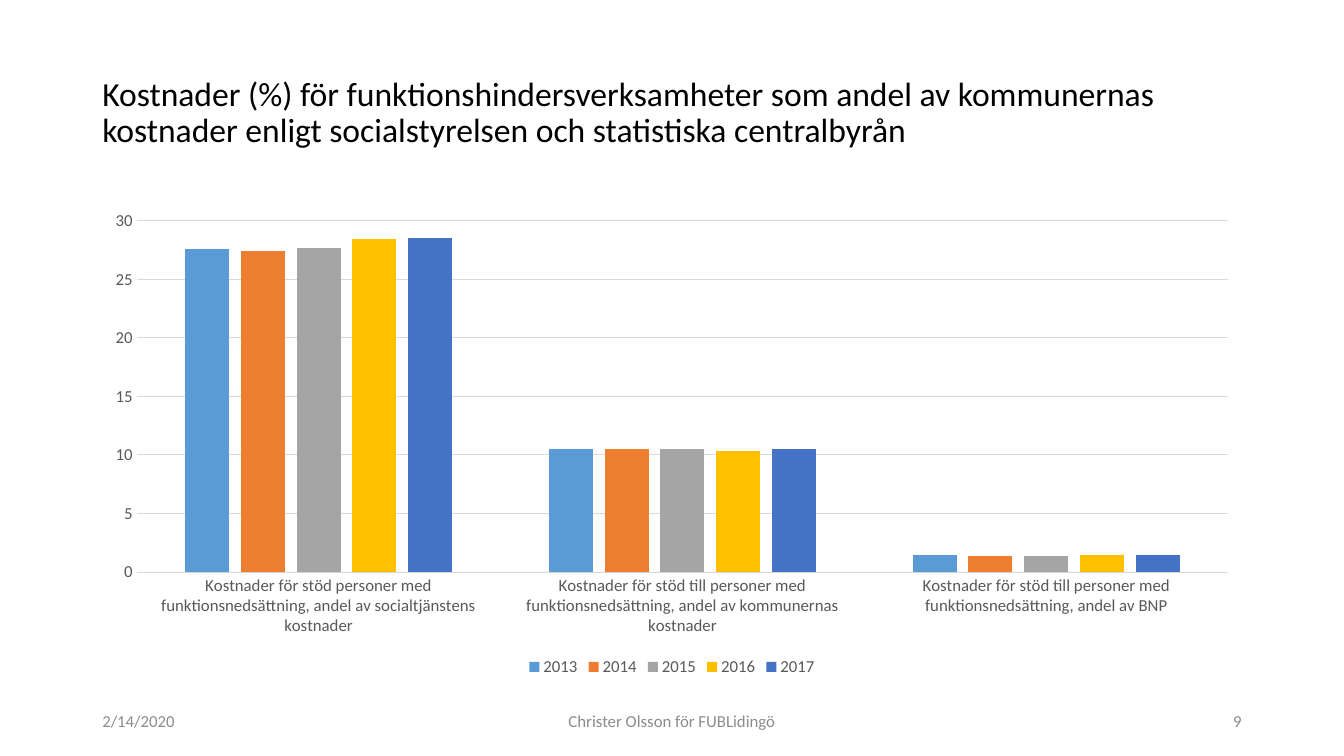
from pptx import Presentation
from pptx.chart.data import CategoryChartData
from pptx.dml.color import RGBColor
from pptx.enum.chart import XL_CHART_TYPE as Kind, XL_LEGEND_POSITION as Spot, XL_TICK_MARK as Tick
from pptx.enum.text import MSO_ANCHOR as Anchor, PP_ALIGN as Align
from pptx.util import Pt

YEARS = {
    "2013": ("5B9BD5", (27.6, 10.5, 1.5)),
    "2014": ("ED7D31", (27.4, 10.5, 1.4)),
    "2015": ("A5A5A5", (27.7, 10.5, 1.4)),
    "2016": ("FFC000", (28.4, 10.3, 1.5)),
    "2017": ("4472C4", (28.5, 10.5, 1.5)),
}
GROUPS = (
    "Kostnader för stöd personer med funktionsnedsättning, andel av socialtjänstens kostnader",
    "Kostnader för stöd till personer med funktionsnedsättning, andel av kommunernas kostnader",
    "Kostnader för stöd till personer med funktionsnedsättning, andel av BNP",
)


def color(code):
    return RGBColor.from_string(code)


class Page:
    face = "Calibri"
    black, dark, gray, pale = "000000", "595959", "8C8C8C", "D9D9D9"

    def __init__(self, deck):
        self.slide = deck.slides.add_slide(deck.slide_layouts[6])

    def style(self, font, size, code):
        font.name, font.size = self.face, Pt(size)
        font.color.rgb = color(code)

    def rule(self, line):
        line.color.rgb = color(self.pale)
        line.width = Pt(0.75)

    def text(self, box, words, size, code, align=Align.LEFT, space=1.0):
        frame = self.slide.shapes.add_textbox(*map(Pt, box)).text_frame
        frame.word_wrap = True
        frame.vertical_anchor = Anchor.MIDDLE
        para = frame.paragraphs[0]
        para.alignment, para.line_spacing = align, space
        run = para.add_run()
        run.text = words
        self.style(run.font, size, code)

    def bars(self, box, groups, years):
        data = CategoryChartData()
        data.categories = groups
        for year, (_, vals) in years.items():
            data.add_series(year, vals)
        chart = self.slide.shapes.add_chart(
            Kind.COLUMN_CLUSTERED, *map(Pt, box), data).chart
        self.style(chart.font, 10, self.black)
        chart.has_title = False

        # Columns
        plot = chart.plots[0]
        plot.gap_width, plot.overlap = 219, -27
        plot.vary_by_categories = False
        for series, (code, _) in zip(plot.series, years.values()):
            series.format.fill.solid()
            series.format.fill.fore_color.rgb = color(code)

        # Axes
        for axis in (chart.category_axis, chart.value_axis):
            axis.major_tick_mark = axis.minor_tick_mark = Tick.NONE
            self.style(axis.tick_labels.font, 12, self.dark)
        self.rule(chart.category_axis.format.line)
        scale = chart.value_axis
        scale.minimum_scale, scale.maximum_scale, scale.major_unit = 0, 30, 5
        scale.format.line.fill.background()
        self.rule(scale.major_gridlines.format.line)

        # Legend
        chart.has_legend = True
        chart.legend.position = Spot.BOTTOM
        chart.legend.include_in_layout = False
        self.style(chart.legend.font, 12, self.dark)


def main():
    deck = Presentation()
    deck.slide_width, deck.slide_height = Pt(960), Pt(540)
    page = Page(deck)
    left, wide = 66, 828

    # Title
    page.text((left, 28.75, wide, 104.4),
              "Kostnader (%) för funktionshindersverksamheter som andel av kommunernas "
              "kostnader enligt socialstyrelsen och statistiska centralbyrån",
              24, page.black, space=0.9)

    # Chart
    page.bars((left, 143.75, wide, 342.6), GROUPS, YEARS)

    # Footer
    for x, width, words, align in (
        (left, 216, "2/14/2020", Align.LEFT),
        (318, 324, "Christer Olsson för FUBLidingö", Align.CENTER),
        (678, 216, "9", Align.RIGHT),
    ):
        page.text((x, 500.5, width, 28.75), words, 12, page.gray, align)

    deck.save("out.pptx")


if __name__ == "__main__":
    main()
